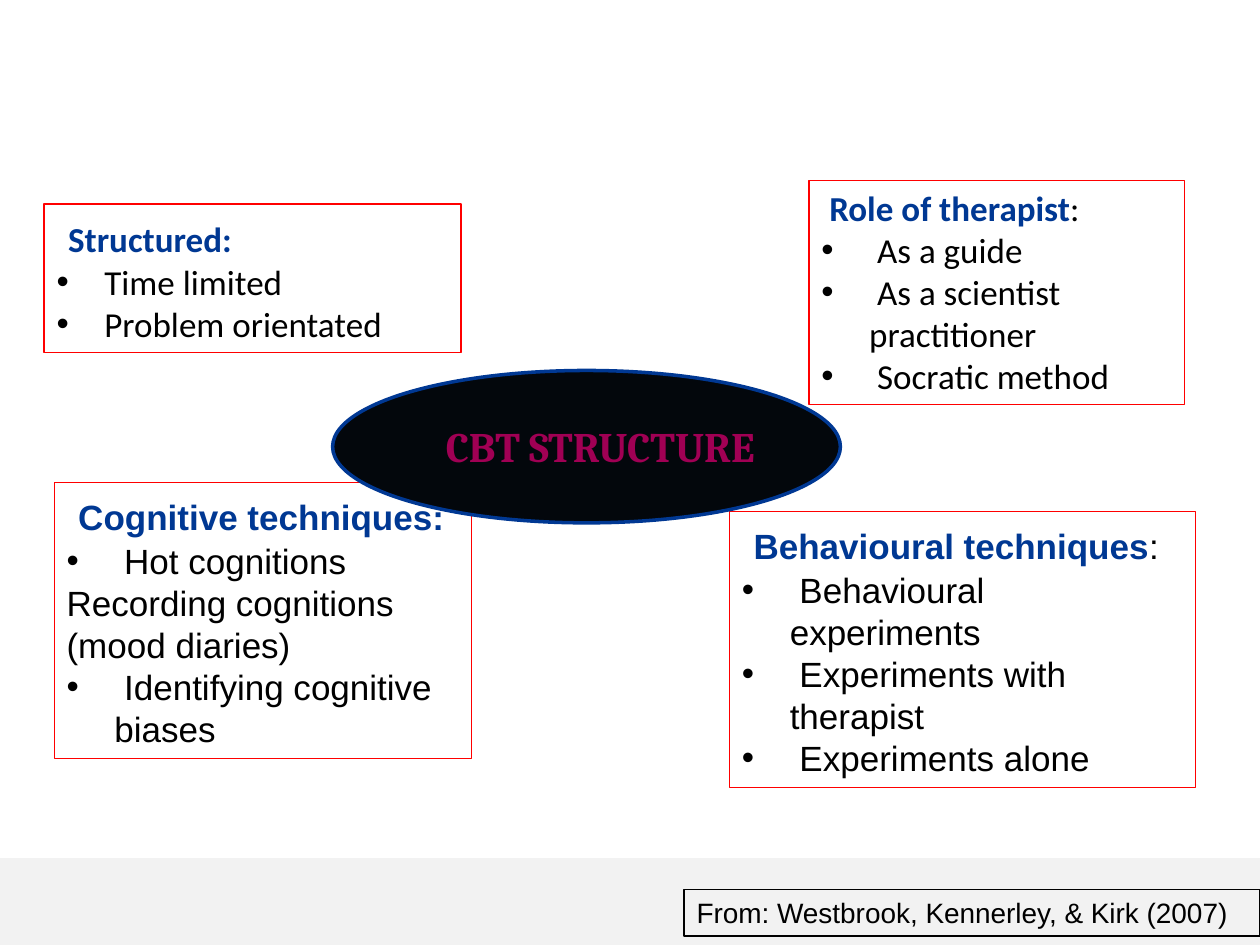
from lxml import etree
from pptx import Presentation
from pptx.dml.color import RGBColor
from pptx.enum.shapes import MSO_SHAPE
from pptx.enum.text import MSO_ANCHOR, PP_ALIGN
from pptx.oxml.ns import qn
from pptx.util import Inches, Pt

RECT, OVAL = MSO_SHAPE.RECTANGLE, MSO_SHAPE.OVAL
TOP, LEFT = MSO_ANCHOR.TOP, PP_ALIGN.LEFT
BLACK = RGBColor(0, 0, 0)
NAVY = RGBColor(0x00, 0x38, 0x93)
RED = RGBColor(0xFF, 0, 0)
INK = RGBColor(0x03, 0x07, 0x0C)
PLUM = RGBColor(0xA0, 0x00, 0x54)
GREY = RGBColor(0xF2, 0xF2, 0xF2)
INDENT = Inches(0.38)


class Deck:
    """Holds the text style and the current slide."""

    style = {"name": "Arial", "size": Pt(20), "bold": False}

    def __init__(self, slide):
        self.slide = slide

    def shape(self, kind, box, fill=None, line=None, width=0.75):
        item = self.slide.shapes.add_shape(kind, *map(Inches, box))
        item.shadow.inherit = False
        if fill is None:
            item.fill.background()
        else:
            item.fill.solid()
            item.fill.fore_color.rgb = fill
        if line is None:
            item.line.fill.background()
        else:
            item.line.color.rgb = line
            item.line.width = Pt(width)
        return item

    def run(self, para, text, color=BLACK, **style):
        run = para.add_run()
        run.text = text
        for key, value in {**self.style, **style}.items():
            setattr(run.font, key, value)
        run.font.color.rgb = color

    def start(self, item):
        frame = item.text_frame
        frame.word_wrap = True
        frame.vertical_anchor = TOP
        para = frame.paragraphs[0]
        para.alignment = LEFT
        return para

    def label(self, box, text, color, fill=None, line=None, **style):
        item = self.shape(RECT, box, fill, line)
        self.run(self.start(item), text, color, **style)

    def bullet(self, para):
        props = para._p.get_or_add_pPr()
        props.set("marL", str(INDENT))
        props.set("indent", str(-INDENT))
        etree.SubElement(props, qn("a:buFont")).set("typeface", "Arial")
        etree.SubElement(props, qn("a:buChar")).set("char", "•")

    def card(self, box, title, tail, items, font, gap):
        item = self.shape(RECT, box, line=RED)
        head = self.start(item)
        self.run(head, " ", **gap)
        self.run(head, title, NAVY, name=font, bold=True)
        if tail:
            self.run(head, tail, name=font)
        for text, dot in items:
            para = item.text_frame.add_paragraph()
            para.alignment = LEFT
            if dot:
                self.bullet(para)
            self.run(para, text, name=font)


def main():
    prs = Presentation()
    prs.slide_width, prs.slide_height = Inches(10), Inches(7.5)
    deck = Deck(prs.slides.add_slide(prs.slide_layouts[6]))

    # Footer band
    deck.shape(RECT, (0, 6.81, 10, 0.69), GREY)

    # Four cards: box, title, tail, (text, bulleted), font, lead space
    wide = {"size": Pt(24)}
    cards = [
        ((0.35, 1.62, 3.31, 1.18), "Structured:", "",
         [("Time limited", True), ("Problem orientated", True)],
         "Calibri", wide),
        ((6.42, 1.43, 2.98, 1.78), "Role of therapist", ":",
         [(" As a guide", True), (" As a scientist practitioner", True),
          (" Socratic method", True)],
         "Calibri", {"name": "Calibri"}),
        ((0.43, 3.83, 3.31, 2.19), "Cognitive techniques:", "",
         [(" Hot cognitions", True),
          ("Recording cognitions (mood diaries)", False),
          (" Identifying cognitive biases", True)],
         "Arial", wide),
        ((5.79, 4.06, 3.7, 2.19), "Behavioural techniques", ":",
         [(" Behavioural experiments", True),
          (" Experiments with therapist", True),
          (" Experiments alone", True)],
         "Arial", wide),
    ]
    for card in cards:
        deck.card(*card)

    # Centre oval and its title
    deck.shape(OVAL, (2.64, 2.94, 4.03, 1.21), INK, NAVY, 2)
    deck.label((3.44, 3.29, 2.87, 0.5), "CBT STRUCTURE", PLUM, fill=INK,
               name="Cambria", size=Pt(24), bold=True)

    # Source line
    deck.label((5.43, 7.06, 4.57, 0.37),
               "From: Westbrook, Kennerley, & Kirk (2007)", BLACK,
               line=BLACK, size=Pt(16))

    prs.save("out.pptx")


if __name__ == "__main__":
    main()
